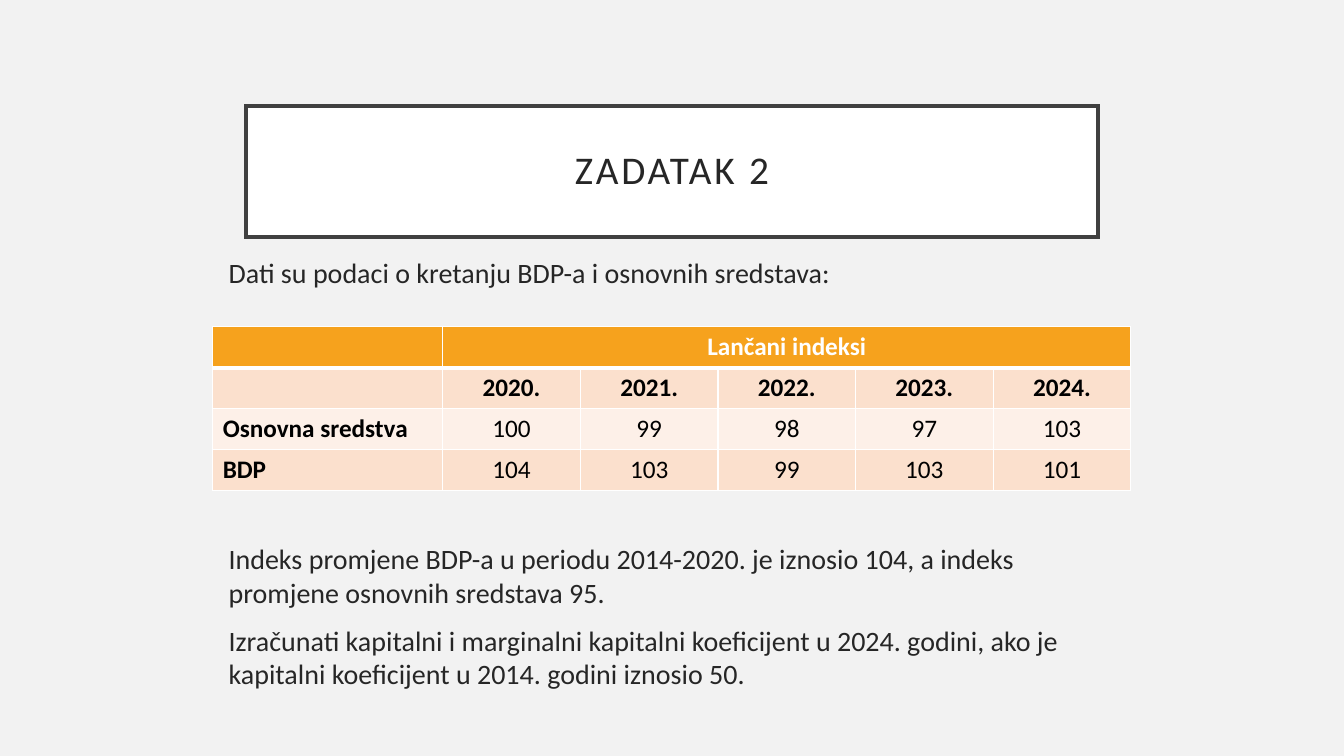
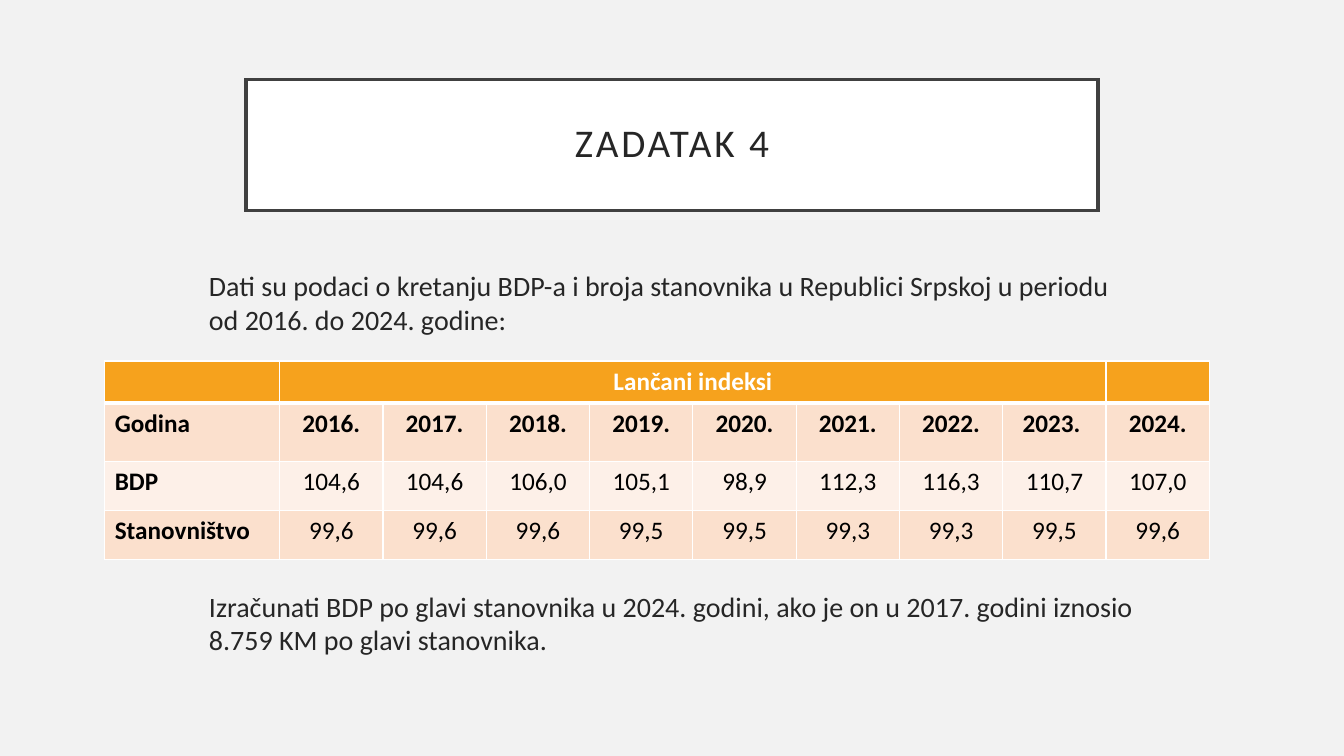
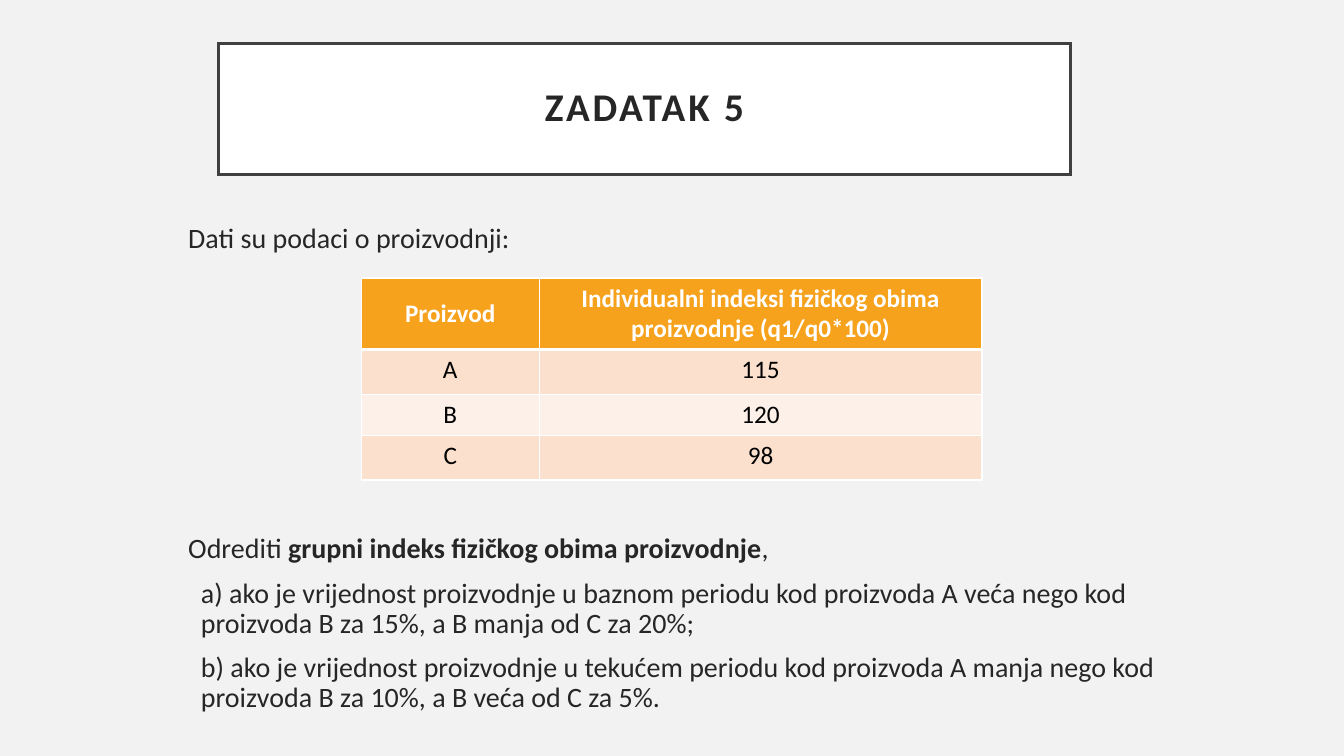
import dataclasses

import pptx
import pptx.dml.color
import pptx.enum.shapes
import pptx.enum.text
import pptx.oxml
import pptx.oxml.ns
import pptx.util

Pt = pptx.util.Pt
ALIGN = pptx.enum.text.PP_ALIGN
ANCHOR = pptx.enum.text.MSO_ANCHOR


@dataclasses.dataclass(frozen=True)
class Theme:
    font: str = "Calibri"
    background: str = "F2F2F2"
    white: str = "FFFFFF"
    frame: str = "404040"
    text: str = "262626"
    cell_text: str = "000000"
    header: str = "F6A21D"
    bands: tuple = ("FBE0CD", "FDF0E8")
    title_size: float = 28
    body_size: float = 20
    table_size: float = 18
    title_box: tuple = (608.4, 93.6)
    paragraph_gap: float = 10


THEME = Theme()


def rgb(colour):
    return pptx.dml.color.RGBColor.from_string(colour)


def add_run(paragraph, text, size, colour, bold=False):
    run = paragraph.add_run()
    run.text = text
    run.font.name = THEME.font
    run.font.size = Pt(size)
    run.font.bold = bold
    run.font.color.rgb = rgb(colour)
    return run


# Framed title
def add_title(slide, left, top, text, bold=False):
    width, height = THEME.title_box
    frame = slide.shapes.add_shape(pptx.enum.shapes.MSO_SHAPE.RECTANGLE,
                                   Pt(left), Pt(top), Pt(width), Pt(height))
    frame.shadow.inherit = False
    frame.fill.solid()
    frame.fill.fore_color.rgb = rgb(THEME.white)
    frame.line.color.rgb = rgb(THEME.frame)
    frame.line.width = Pt(2.5)
    corner = pptx.oxml.parse_xml(
        f'<a:miter {pptx.oxml.ns.nsdecls("a")} lim="800000"/>')
    frame.line._get_or_add_ln().append(corner)
    frame.text_frame.word_wrap = True
    frame.text_frame.vertical_anchor = ANCHOR.MIDDLE
    heading = frame.text_frame.paragraphs[0]
    heading.alignment = ALIGN.CENTER
    heading.line_spacing = 0.9
    run = add_run(heading, text, THEME.title_size, THEME.text, bold)
    run.font._element.set("spc", "200")


# Body text: each paragraph is a list of runs, every second run is bold
def add_body(slide, left, top, width, height, paragraphs,
             line_spacing=1.0, later_indent=0):
    box = slide.shapes.add_textbox(Pt(left), Pt(top), Pt(width), Pt(height))
    box.text_frame.word_wrap = True
    for index, runs in enumerate(paragraphs):
        if index == 0:
            paragraph = box.text_frame.paragraphs[0]
        else:
            paragraph = box.text_frame.add_paragraph()
            paragraph.space_before = Pt(THEME.paragraph_gap)
            paragraph._p.get_or_add_pPr().set("marL", str(Pt(later_indent)))
        paragraph.line_spacing = line_spacing
        for position, text in enumerate(runs):
            add_run(paragraph, text, THEME.body_size, THEME.text,
                    bold=position % 2 == 1)


def set_borders(cell, top, bottom):
    properties = cell._tc.get_or_add_tcPr()
    widths = {"lnL": 1, "lnR": 1, "lnT": top, "lnB": bottom}
    for place, (side, width) in enumerate(widths.items()):
        properties.insert(place, pptx.oxml.parse_xml(
            f'<a:{side} {pptx.oxml.ns.nsdecls("a")} w="{Pt(width)}">'
            f'<a:solidFill><a:srgbClr val="{THEME.white}"/></a:solidFill>'
            f'</a:{side}>'))


# Index table: an orange header over banded rows
def add_index_table(slide, left, top, widths, heights, rows,
                    header_span=1, bold_rows=1, row_labels=False):
    table = slide.shapes.add_table(
        len(rows), len(widths), Pt(left), Pt(top),
        Pt(sum(widths)), Pt(sum(heights))).table
    table.first_row = table.horz_banding = False
    for column, width in zip(table.columns, widths):
        column.width = Pt(width)
    for row, height in zip(table.rows, heights):
        row.height = Pt(height)
    for r, texts in enumerate(rows):
        for c, text in enumerate(texts):
            cell = table.cell(r, c)
            cell.fill.solid()
            cell.fill.fore_color.rgb = rgb(
                THEME.bands[(r - 1) % 2] if r else THEME.header)
            set_borders(cell, top=3 if r == 1 else 1, bottom=1 if r else 3)
            if r == 0:
                cell.vertical_anchor = ANCHOR.MIDDLE
            if not text:
                continue
            label = row_labels and c == 0
            paragraph = cell.text_frame.paragraphs[0]
            paragraph.alignment = ALIGN.LEFT if label else ALIGN.CENTER
            add_run(paragraph, text, THEME.table_size,
                    THEME.cell_text if r else THEME.white,
                    bold=label or r < bold_rows)
    if header_span > 1:
        table.cell(0, 1).merge(table.cell(0, header_span))


def build_task_2(slide):
    add_title(slide, 175.8, 75.6, "ZADATAK 2")
    add_body(slide, 156.2, 179.3, 647, 32,
             [["Dati su podaci o kretanju BDP-a i osnovnih sredstava:"]])
    add_index_table(
        slide, 151.9, 233.5, [164.4] + [98.3] * 5, [29.2] * 4,
        [["", "Lančani indeksi", "", "", "", ""],
         ["", "2020.", "2021.", "2022.", "2023.", "2024."],
         ["Osnovna sredstva", "100", "99", "98", "97", "103"],
         ["BDP", "104", "103", "99", "103", "101"]],
        header_span=5, bold_rows=2, row_labels=True)
    add_body(slide, 156.2, 383.5, 647, 116, [
        ["Indeks promjene BDP-a u periodu 2014-2020. je iznosio 104, "
         "a indeks promjene osnovnih sredstava 95."],
        ["Izračunati kapitalni i marginalni kapitalni koeficijent u 2024. "
         "godini, ako je kapitalni koeficijent u 2014. godini iznosio 50."]])


def build_task_4(slide):
    add_title(slide, 175.8, 56.9, "ZADATAK 4")
    add_body(slide, 142.2, 188.6, 675, 56, [
        ["Dati su podaci o kretanju BDP-a i broja stanovnika u Republici "
         "Srpskoj u periodu od 2016. do 2024. godine:"]])
    add_index_table(
        slide, 74.8, 257.8, [125] + [73.8] * 9, [30.2, 41.6, 35, 35],
        [["", "Lančani indeksi"] + [""] * 8,
         ["Godina", "2016.", "2017.", "2018.", "2019.", "2020.", "2021.",
          "2022.", "2023. ", "2024."],
         ["BDP", "104,6", "104,6", "106,0", "105,1", "98,9", "112,3",
          "116,3", "110,7", "107,0"],
         ["Stanovništvo", "99,6", "99,6", "99,6", "99,5", "99,5", "99,3",
          "99,3", "99,5", "99,6"]],
        header_span=8, bold_rows=2, row_labels=True)
    add_body(slide, 142.2, 417.2, 675, 56, [
        ["Izračunati BDP po glavi stanovnika u 2024. godini, ako je on u "
         "2017. godini iznosio 8.759 KM po glavi stanovnika."]])


def build_task_5(slide):
    add_title(slide, 156.2, 31, "ZADATAK 5", bold=True)
    add_body(slide, 127.4, 157, 705.6, 30,
             [["Dati su podaci o proizvodnji:"]], line_spacing=0.9)
    add_index_table(
        slide, 258, 198.5, [127.2, 316.2], [51.2, 32, 29.2, 32],
        [["Proizvod",
          "Individualni indeksi fizičkog obima proizvodnje (q1/q0*100)"],
         ["A", "115"], ["B", "120"], ["C", "98"]])
    add_body(slide, 127.4, 378.4, 705.6, 138, [
        ["Odrediti ", "grupni indeks fizičkog obima proizvodnje", ","],
        ["a) ako je vrijednost proizvodnje u baznom periodu kod proizvoda A "
         "veća nego kod proizvoda B za 15%, a B manja od C za 20%;"],
        ["b) ako je vrijednost proizvodnje u tekućem periodu kod proizvoda A "
         "manja nego kod proizvoda B za 10%, a B veća od C za 5%."]],
        line_spacing=0.9, later_indent=9)


def main():
    deck = pptx.Presentation()
    deck.slide_width, deck.slide_height = Pt(960), Pt(540)
    # Shared background
    backdrop = deck.slide_master.background.fill
    backdrop.solid()
    backdrop.fore_color.rgb = rgb(THEME.background)
    for build in (build_task_2, build_task_4, build_task_5):
        build(deck.slides.add_slide(deck.slide_layouts[6]))
    deck.save("out.pptx")


if __name__ == "__main__":
    main()
